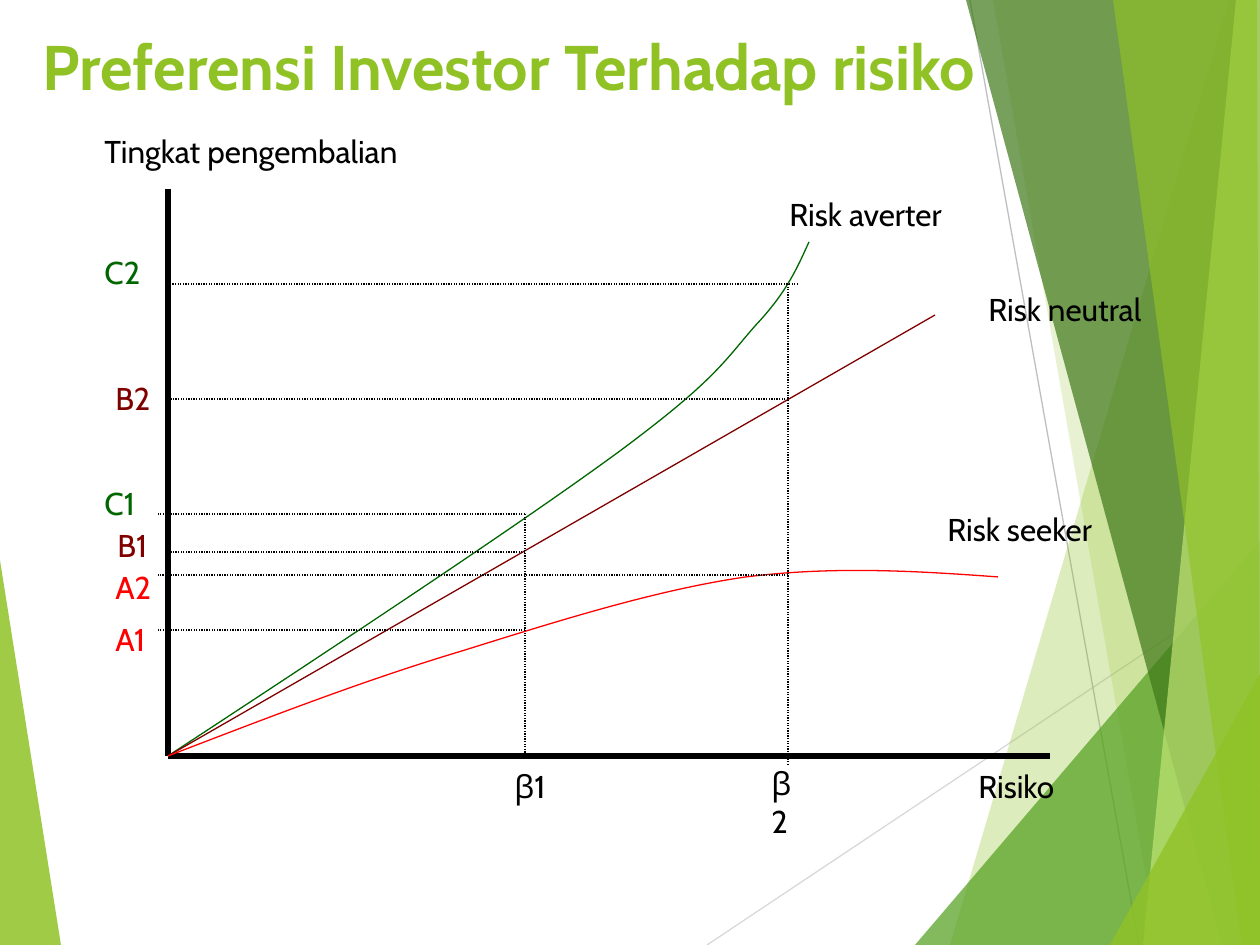
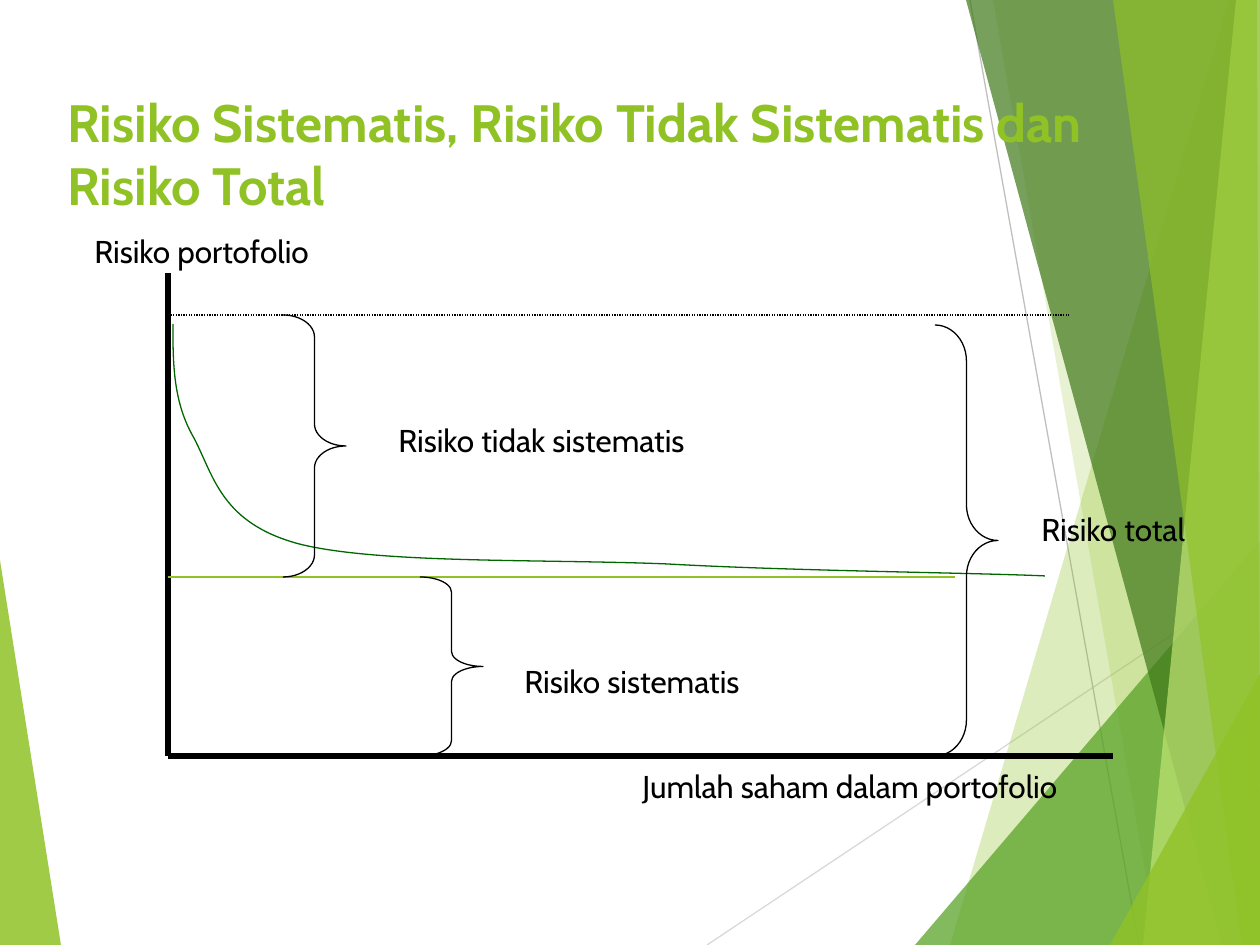
from dataclasses import dataclass
from typing import Any

from lxml import etree
from pptx import Presentation
from pptx.dml.color import RGBColor
from pptx.enum.dml import MSO_LINE
from pptx.enum.shapes import MSO_CONNECTOR, MSO_SHAPE
from pptx.enum.text import MSO_ANCHOR, PP_ALIGN
from pptx.oxml.ns import qn
from pptx.util import Emu, Pt

STRAIGHT = MSO_CONNECTOR.STRAIGHT
RIGHT_BRACE = MSO_SHAPE.RIGHT_BRACE
DOTTED = MSO_LINE.ROUND_DOT
TOP = MSO_ANCHOR.TOP
LEFT = PP_ALIGN.LEFT

SCALE = 914400 / 126
SLIDE_WIDTH, SLIDE_HEIGHT = 1260, 945
FONT = "Cabin"
LABEL_HEIGHT = 50
BRACE_WIDTH = 63

BLACK = RGBColor(0x00, 0x00, 0x00)
LIME = RGBColor(0x90, 0xC2, 0x26)
LEAF = RGBColor(0x54, 0xA0, 0x21)
FOREST = RGBColor(0x3F, 0x78, 0x19)
PALE_LIME = RGBColor(0xC0, 0xE4, 0x74)
PALE_GRAY = RGBColor(0xD9, 0xD9, 0xD9)
GRAY = RGBColor(0xBF, 0xBF, 0xBF)
DARK_GREEN = RGBColor(0x00, 0x66, 0x00)
MAROON = RGBColor(0x80, 0x00, 0x00)
RED = RGBColor(0xFF, 0x00, 0x00)

BANDS = [
    (LIME, 30, [(1229, 0), (950, 945), (1260, 945), (1260, 0)]),
    (LIME, 20, [(993, 0), (1158, 945), (1260, 945), (1260, 0)]),
    (LEAF, 72, [(915, 945), (1260, 541), (1260, 945)]),
    (FOREST, 70, [(966, 0), (1222, 945), (1260, 945), (1260, 0)]),
    (PALE_LIME, 70, [(1236, 0), (1143, 945), (1260, 945), (1260, 0)]),
    (LIME, 65, [(1113, 0), (1242, 945), (1260, 945), (1257, 0)]),
    (LIME, 80, [(1110, 945), (1260, 674), (1260, 945)]),
]


def px(length):
    """Turn px into EMU."""
    return Emu(round(length * SCALE))


def bend_segments(freeform):
    """Turn each three straight segments of a freeform into one cubic curve."""
    segments = list(freeform.element.spPr.iter(qn("a:lnTo")))
    for first in range(0, len(segments), 3):
        trio = segments[first:first + 3]
        cubic = etree.Element(qn("a:cubicBezTo"))
        trio[0].addprevious(cubic)
        for segment in trio:
            cubic.append(segment[0])
            segment.getparent().remove(segment)


@dataclass
class Region:
    """A box on a slide whose parts are placed from its top left corner."""
    slide: Any
    left: int
    top: int
    width: int
    height: int

    def spot(self, point):
        """Give the EMU position of a point in the region."""
        return px(self.left + point[0]), px(self.top + point[1])

    def line(self, start, end, color=BLACK, weight=0.75, dash=None):
        """Draw a straight line."""
        connector = self.slide.shapes.add_connector(
            STRAIGHT, *self.spot(start), *self.spot(end))
        connector.line.color.rgb = color
        connector.line.width = Pt(weight)
        if dash:
            connector.line.dash_style = dash
        etree.SubElement(connector.element.spPr, qn("a:effectLst"))

    def outline(self, points, close):
        """Build a freeform through the points."""
        start, *rest = [self.spot(point) for point in points]
        builder = self.slide.shapes.build_freeform(*start)
        builder.add_line_segments(rest, close=close)
        freeform = builder.convert_to_shape()
        freeform.shadow.inherit = False
        return freeform

    def curve(self, points, color):
        """Draw a chain of cubic curves that share their end points."""
        bow = self.outline(points, close=False)
        bend_segments(bow)
        bow.fill.background()
        bow.line.color.rgb = color
        bow.line.width = Pt(0.75)

    def band(self, points, color, opacity):
        """Draw a translucent polygon."""
        polygon = self.outline(points, close=True)
        polygon.line.fill.background()
        polygon.fill.solid()
        polygon.fill.fore_color.rgb = color
        tint = polygon.element.spPr.find(".//" + qn("a:srgbClr"))
        etree.SubElement(tint, qn("a:alpha"), val=str(opacity * 1000))

    def brace(self, left, top, bottom, bend):
        """Draw a right brace between two heights."""
        brace = self.slide.shapes.add_shape(
            RIGHT_BRACE, *self.spot((left, top)), px(BRACE_WIDTH), px(bottom - top))
        brace.adjustments[0] = bend
        brace.adjustments[1] = 0.5
        brace.shadow.inherit = False
        brace.fill.background()
        brace.line.color.rgb = BLACK
        brace.line.width = Pt(0.75)

    def text(self, words, left, top, width, height=LABEL_HEIGHT, color=BLACK,
             size=18, bold=False, wrap=False):
        """Write one paragraph of text."""
        box = self.slide.shapes.add_textbox(
            *self.spot((left, top)), px(width), px(height))
        frame = box.text_frame
        frame.word_wrap = wrap
        frame.vertical_anchor = TOP
        paragraph = frame.paragraphs[0]
        paragraph.alignment = LEFT
        run = paragraph.add_run()
        run.text = words
        run.font.name = FONT
        run.font.size = Pt(size)
        run.font.bold = bold
        run.font.color.rgb = color

    def axes(self):
        """Draw the axes along the left and bottom edges."""
        origin = (0, self.height)
        self.line((0, 0), origin, weight=3)
        self.line(origin, (self.width, self.height), weight=3)


def draw_backdrop(page):
    """Draw the green bands and thin lines that every slide shares."""
    page.band([(0, 560), (61, 945), (0, 945)], LIME, 85)
    page.line((707, 945), (1260, 576), PALE_GRAY)
    page.line((970, 0), (1139, 945), GRAY)
    for color, opacity, corners in BANDS:
        page.band(corners, color, opacity)


def draw_title(box, words, size):
    """Write the slide title across its box."""
    box.text(words, 0, 0, box.width, box.height, LIME, size, bold=True, wrap=True)


def draw_preferences(plot):
    """Plot return against risk for three kinds of investor."""
    plot.axes()
    origin = (0, plot.height)
    plot.curve([origin, (177, 451), (354, 334), (452, 262), (549, 190), (557, 171),
                (588, 136), (620, 102), (630, 77), (641, 53)], DARK_GREEN)
    plot.line(origin, (767, 126), MAROON)
    plot.curve([origin, (99, 529), (197, 491), (294, 462), (390, 432), (488, 401),
                (578, 388), (666, 377), (748, 382), (830, 388)], RED)

    beta1, beta2 = 357, 620
    plot.line((beta1, 325), (beta1, plot.height), dash=DOTTED)
    plot.line((beta2, 95), (beta2, plot.height + 10), dash=DOTTED)
    levels = [
        ("C1", DARK_GREEN, 325, -10, beta1, -76, 289),
        ("B1", MAROON, 363, 0, beta1, -63, 331),
        ("A1", RED, 441, -10, beta1, -65, 425),
        ("C2", DARK_GREEN, 95, 0, beta2 + 10, -76, 58),
        ("B2", MAROON, 210, 0, beta2, -65, 184),
        ("A2", RED, 386, -10, beta2, -65, 373),
    ]
    for name, color, level, start, end, name_left, name_top in levels:
        plot.line((end, level), (start, level), dash=DOTTED)
        plot.text(name, name_left, name_top, 65, color=color)

    for words, left, top, width in [
            ("Risk seeker", 767, 315, 190),
            ("Risk neutral", 808, 95, 192),
            ("Risk averter", 609, 0, 193),
            ("Tingkat pengembalian", -76, -63, 335),
            ("Risiko", 798, 572, 111),
            ("β1", 334, 572, 60)]:
        plot.text(words, left, top, width)
    plot.text("β2", 591, 569, 54, wrap=True)


def draw_portfolio_risk(plot):
    """Plot portfolio risk against the number of shares held."""
    plot.axes()
    total, systematic = 42, 304
    plot.line((0, systematic), (787, systematic), LIME)
    plot.curve([(5, 51), (5, 90), (5, 129), (26, 165), (46, 203), (53, 250),
                (131, 271), (210, 291), (374, 286), (499, 291), (622, 298),
                (814, 300), (877, 303)], DARK_GREEN)
    plot.line((0, total), (902, total), dash=DOTTED)
    plot.brace(115, total, systematic, 0.35)
    plot.brace(252, systematic, plot.height, 0.24)
    plot.brace(767, total + 10, plot.height, 0.57)
    for words, left, top, width in [
            ("Risiko tidak sistematis", 218, 142, 335),
            ("Risiko sistematis", 344, 383, 260),
            ("Risiko total", 861, 231, 179),
            ("Risiko portofolio", -86, -47, 249),
            ("Jumlah saham dalam portofolio", 462, 488, 462)]:
        plot.text(words, left, top, width)


def main():
    """Build both slides and save them."""
    deck = Presentation()
    deck.slide_width, deck.slide_height = px(SLIDE_WIDTH), px(SLIDE_HEIGHT)
    pages = [
        ("Preferensi Investor Terhadap risiko", 36, (30, 21, 1106, 113),
         draw_preferences, (168, 189, 882, 567)),
        ("Risiko Sistematis, Risiko Tidak Sistematis dan Risiko Total", 30,
         (55, 84, 1124, 181), draw_portfolio_risk, (168, 273, 945, 483)),
    ]
    for title, size, title_box, draw_plot, plot_box in pages:
        slide = deck.slides.add_slide(deck.slide_layouts[6])
        draw_backdrop(Region(slide, 0, 0, SLIDE_WIDTH, SLIDE_HEIGHT))
        draw_title(Region(slide, *title_box), title, size)
        draw_plot(Region(slide, *plot_box))
    deck.save("out.pptx")


if __name__ == "__main__":
    main()
